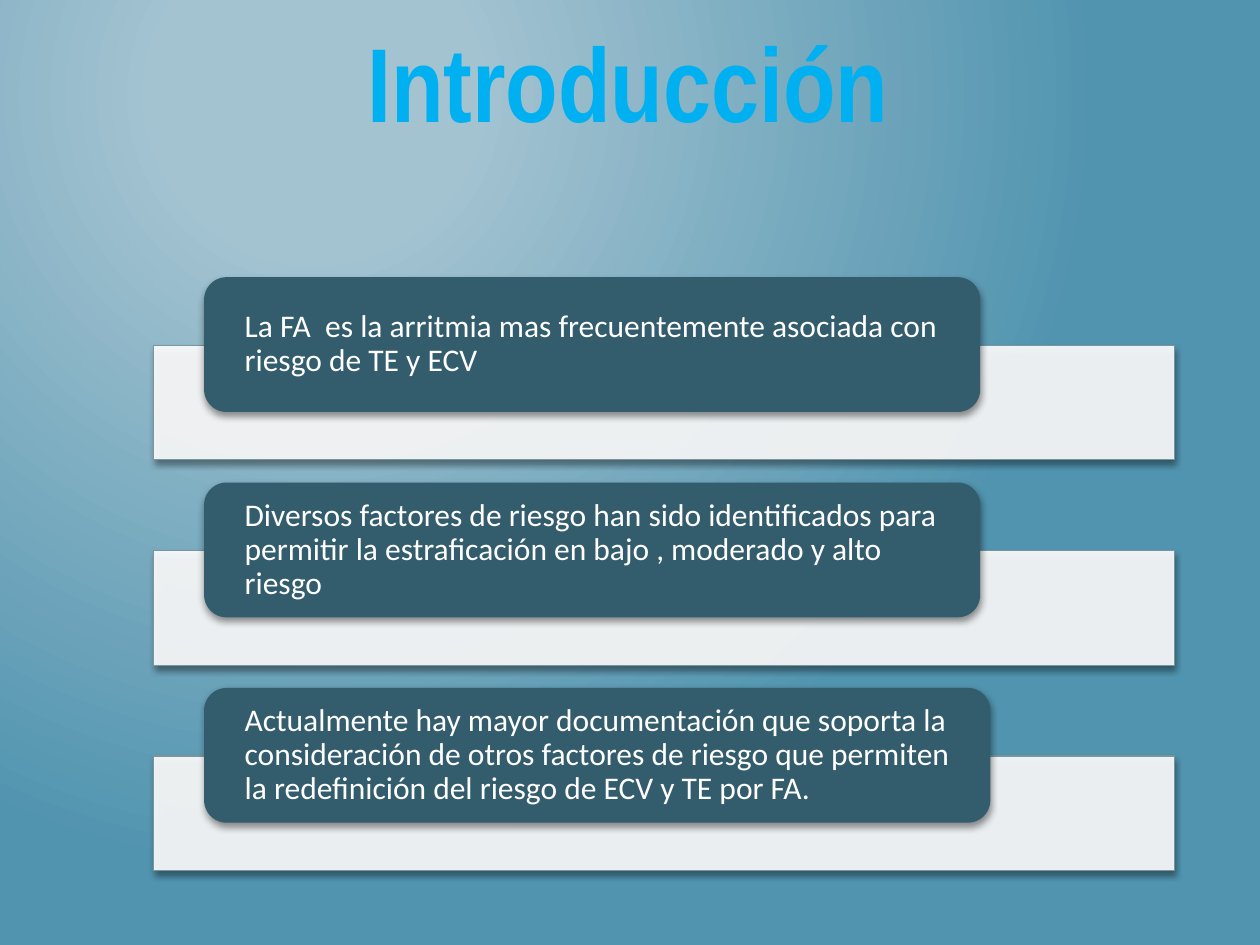
from lxml.etree import SubElement
from pptx import Presentation
from pptx.dml.color import RGBColor
from pptx.enum.shapes import MSO_SHAPE as SHAPE
from pptx.enum.text import MSO_ANCHOR as ANCHOR, MSO_AUTO_SIZE as AUTO, PP_ALIGN as ALIGN
from pptx.oxml.ns import qn
from pptx.util import Inches, Pt

LIGHT_BLUE = RGBColor(0xA3, 0xC3, 0xD1)
MID_BLUE = RGBColor(0x51, 0x94, 0xAF)
SKY = RGBColor(0x00, 0xB0, 0xF0)
TEAL = RGBColor(0x33, 0x5D, 0x6D)
GREY = RGBColor(0x7C, 0x95, 0x9A)
WHITE = RGBColor(0xFF, 0xFF, 0xFF)

TOP, PITCH = 2.2, 1.63
POINTS = [
    ("La FA  es la arritmia mas frecuentemente asociada con riesgo de TE y ECV", 6.16),
    ("Diversos factores de riesgo han sido identificados para permitir la "
     "estraficación en bajo , moderado y alto riesgo", 6.16),
    ("Actualmente hay mayor documentación que soporta la consideración de otros "
     "factores de riesgo que permiten la redefinición del riesgo de ECV y TE por FA.", 6.24),
]


class SlideBuilder:
    """Draws styled elements on the current slide."""

    def __init__(self, s):
        self.s = s

    def background(self):
        fill = self.s.background.fill
        fill.gradient()
        stops = zip(fill.gradient_stops, (0.2, 1), (LIGHT_BLUE, MID_BLUE))
        for stop, position, color in stops:
            stop.position = position
            stop.color.rgb = color
        grad = self.s.element.find(".//" + qn("a:gradFill"))
        grad.remove(grad.find(qn("a:lin")))
        circle = SubElement(grad, qn("a:path"), {"path": "circle"})
        SubElement(circle, qn("a:fillToRect"), l="50000", t="20000", r="100000", b="100000")

    def add_text(self, tf, text, font, size, color, bold=False):
        tf.word_wrap = True
        tf.auto_size = AUTO.NONE
        tf.vertical_anchor = ANCHOR.MIDDLE
        p = tf.paragraphs[0]
        r = p.add_run()
        r.text = text
        r.font.name, r.font.size, r.font.bold = font, Pt(size), bold
        r.font.color.rgb = color
        return p

    def title(self, text, x, y, w, h):
        sp = self.s.shapes.title
        sp.left, sp.top, sp.width, sp.height = map(Inches, (x, y, w, h))
        p = self.add_text(sp.text_frame, text, "Arial Narrow", 60, SKY, True)
        p.alignment = ALIGN.CENTER

    def box(self, kind, x, y, w, h, color):
        sp = self.s.shapes.add_shape(kind, *map(Inches, (x, y, w, h)))
        sp.fill.solid()
        sp.fill.fore_color.rgb = color
        sp.line.fill.background()
        sp.shadow.inherit = False
        effects = sp.element.spPr.find(qn("a:effectLst"))
        shadow = SubElement(effects, qn("a:outerShdw"), blurRad=str(Pt(4)), dist=str(Pt(2)),
                            dir="5400000", algn="ctr", rotWithShape="0")
        black = SubElement(shadow, qn("a:srgbClr"), val="000000")
        SubElement(black, qn("a:alpha"), val="44000")
        return sp

    def band(self, x, y, w, h):
        sp = self.box(SHAPE.RECTANGLE, x, y, w, h, WHITE)
        color = sp.element.spPr.find(qn("a:solidFill")).find(qn("a:srgbClr"))
        SubElement(color, qn("a:alpha"), val="90000")
        sp.line.color.rgb = GREY
        sp.line.width = Pt(0.75)

    def card(self, text, x, y, w, h):
        tf = self.box(SHAPE.ROUNDED_RECTANGLE, x, y, w, h, TEAL).text_frame
        tf.margin_left = tf.margin_right = Inches(0.27)
        tf.margin_top = tf.margin_bottom = Inches(0.05)
        p = self.add_text(tf, text, "Calibri", 18, WHITE)
        p.alignment = ALIGN.LEFT
        p.line_spacing = 0.9


def main():
    prs = Presentation()
    prs.slide_width, prs.slide_height = Inches(10), Inches(7.5)
    builder = SlideBuilder(prs.slides.add_slide(prs.slide_layouts[5]))
    builder.background()
    builder.title("Introducción ", 1.85, 0.13, 6.46, 1.02)
    for i, (text, width) in enumerate(POINTS):
        y = TOP + i * PITCH
        builder.band(1.22, y + 0.54, 8.1, 0.91)
        builder.card(text, 1.62, y, width, 1.07)
    prs.save("out.pptx")


if __name__ == "__main__":
    main()
